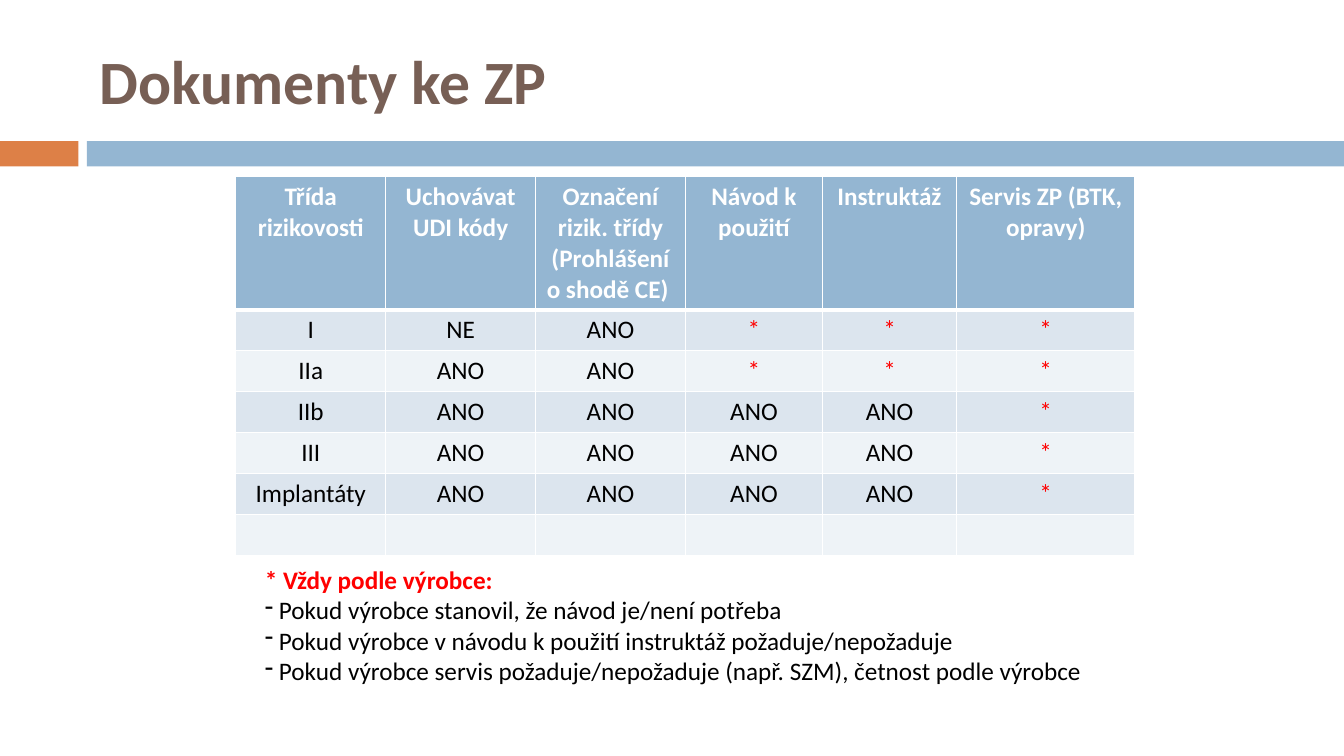
from dataclasses import dataclass

from lxml import etree
from pptx import Presentation, util as u
from pptx.dml.color import RGBColor
from pptx.enum import shapes, text
from pptx.oxml.ns import qn

PX = 3048  # 300 px to the inch
FONT = "Calibri"
HEX = {
    "white": "FFFFFF", "black": "000000", "red": "FF0000",
    "brown": "775F55", "orange": "DD8047", "blue": "94B6D2",
    "dark": "DCE5EE", "light": "EEF3F7",
}


@dataclass
class Box:
    x: int
    y: int
    w: int
    h: int

    def emu(self) -> list[int]:
        return [n * PX for n in (self.x, self.y, self.w, self.h)]


@dataclass
class Bar:
    box: Box
    hue: str


BARS = [
    Bar(Box(0, 420, 233, 75), "orange"),
    Bar(Box(259, 420, 3741, 75), "blue"),
]
TITLE = Box(267, 75, 3567, 324)
GRID = Box(702, 526, 2676, 1125)
NOTE = Box(759, 1665, 2595, 486)

COLS = [446, 446, 446, 408, 399, 531]
HEAD, ROW = 393, 122
CELLS = [
    ["Třída rizikovosti", "Uchovávat UDI kódy",
     "Označení rizik. třídy (Prohlášení o shodě CE) ",
     "Návod k použití", "Instruktáž", "Servis ZP (BTK, opravy)"],
    ["I", "NE", "ANO", "*", "*", "*"],
    ["IIa", "ANO", "ANO", "*", "*", "*"],
    ["IIb", "ANO", "ANO", "ANO", "ANO", "*"],
    ["III", "ANO", "ANO", "ANO", "ANO", "*"],
    ["Implantáty", "ANO", "ANO", "ANO", "ANO", "*"],
    [""] * 6,
]
NOTES = [
    "* Vždy podle výrobce:",
    " Pokud výrobce stanovil, že návod je/není potřeba",
    " Pokud výrobce v návodu k použití instruktáž požaduje/nepožaduje",
    " Pokud výrobce servis požaduje/nepožaduje (např. SZM), četnost podle výrobce",
]


def rgb(hue: str) -> RGBColor:
    return RGBColor.from_string(HEX[hue])


def style(par, size: int, hue: str, bold: bool = False) -> None:
    for run in par.runs:
        font = run.font
        font.name, font.size, font.bold = FONT, u.Pt(size), bold
        font.color.rgb = rgb(hue)


def edge(cell, side: str, width: int) -> None:
    line = etree.SubElement(cell._tc.get_or_add_tcPr(), qn(f"a:ln{side}"),
                            w=str(u.Pt(width)))
    fill = etree.SubElement(line, qn("a:solidFill"))
    etree.SubElement(fill, qn("a:srgbClr"), val=HEX["white"])


def draw_bar(slide, bar: Bar) -> None:
    rect = slide.shapes.add_shape(shapes.MSO_SHAPE.RECTANGLE, *bar.box.emu())
    rect.shadow.inherit = False
    rect.fill.solid()
    rect.fill.fore_color.rgb = rgb(bar.hue)
    rect.line.fill.background()


def draw_title(slide, box: Box, words: str) -> None:
    title = slide.shapes.title
    title.left, title.top, title.width, title.height = box.emu()
    frame = title.text_frame
    frame.text = words
    frame.vertical_anchor = text.MSO_ANCHOR.MIDDLE
    par = frame.paragraphs[0]
    par.alignment = text.PP_ALIGN.LEFT
    style(par, 44, "brown", True)


def draw_cell(cell, row: int, words: str) -> None:
    head = row == 0
    for side in "LRTB":
        thick = (row, side) in ((0, "B"), (1, "T"))
        edge(cell, side, 3 if thick else 1)
    cell.fill.solid()
    cell.fill.fore_color.rgb = rgb(
        "blue" if head else "dark" if row % 2 else "light")
    if words:
        cell.text_frame.text = words
        par = cell.text_frame.paragraphs[0]
        par.alignment = text.PP_ALIGN.CENTER
        hue = "white" if head else "red" if words == "*" else "black"
        style(par, 18, hue, head)


def draw_grid(slide, box: Box) -> None:
    table = slide.shapes.add_table(len(CELLS), len(COLS), *box.emu()).table
    for col, width in zip(table.columns, COLS):
        col.width = width * PX
    for r, words in enumerate(CELLS):
        table.rows[r].height = (ROW if r else HEAD) * PX
        for c, word in enumerate(words):
            draw_cell(table.cell(r, c), r, word)


def draw_notes(slide, box: Box) -> None:
    frame = slide.shapes.add_textbox(*box.emu()).text_frame
    frame.word_wrap = True
    frame.auto_size = text.MSO_AUTO_SIZE.SHAPE_TO_FIT_TEXT
    for i, words in enumerate(NOTES):
        par = frame.add_paragraph() if i else frame.paragraphs[0]
        par.text = words
        style(par, 18, "black" if i else "red", i == 0)
        if i:
            etree.SubElement(par._p.get_or_add_pPr(), qn("a:buChar"), char="-")


def main() -> None:
    deck = Presentation()
    deck.slide_width, deck.slide_height = 4000 * PX, 2250 * PX
    slide = deck.slides.add_slide(deck.slide_layouts[5])

    # Heading and bars
    for bar in BARS:
        draw_bar(slide, bar)
    draw_title(slide, TITLE, "Dokumenty ke ZP")

    # Table and its notes
    draw_grid(slide, GRID)
    draw_notes(slide, NOTE)

    deck.save("out.pptx")


if __name__ == "__main__":
    main()
